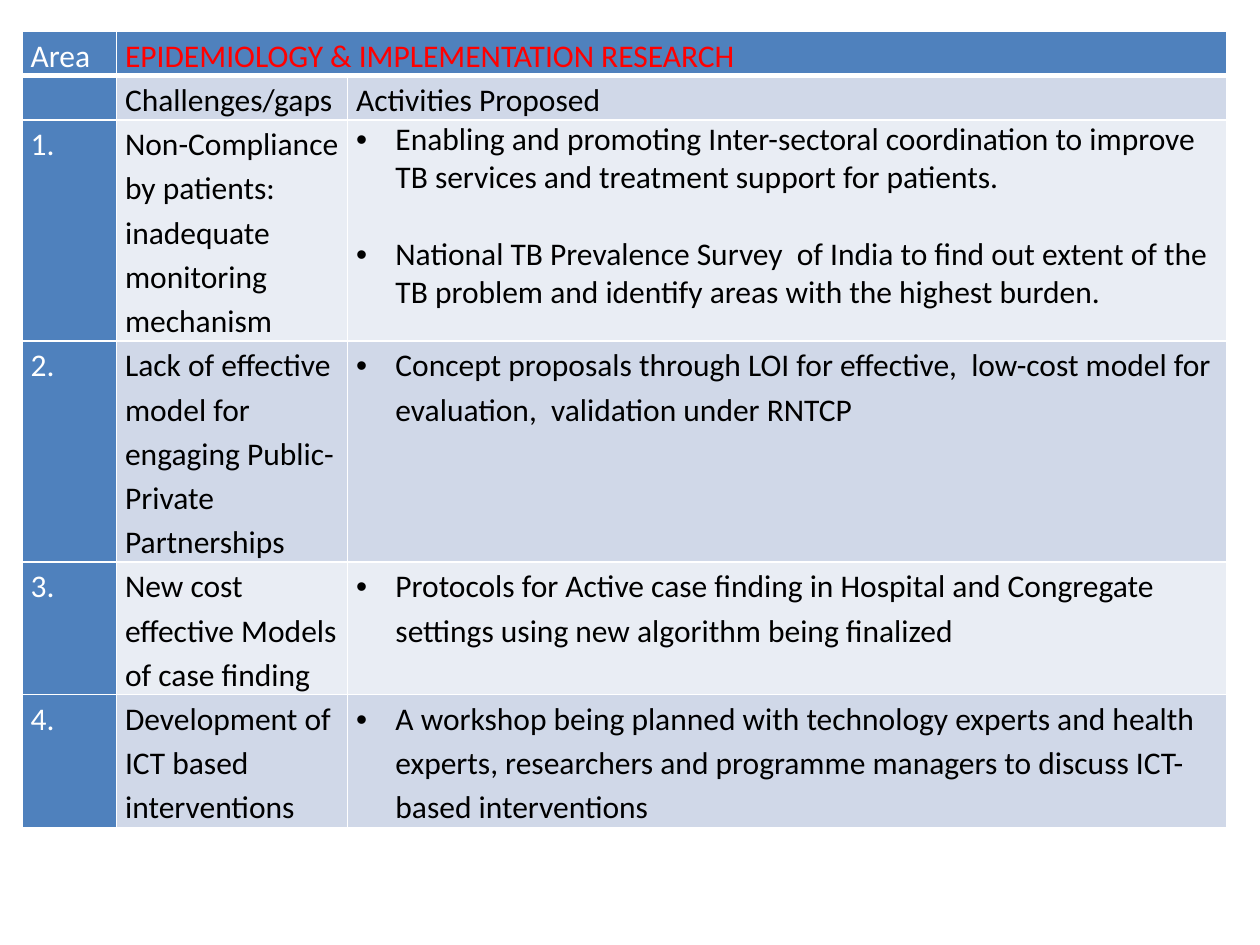
from lxml.etree import SubElement
from pptx import Presentation
from pptx.dml.color import RGBColor
from pptx.oxml.ns import qn
from pptx.util import Pt

WHITE = RGBColor(0xFF, 0xFF, 0xFF)
BLACK = RGBColor(0x00, 0x00, 0x00)
RED = RGBColor(0xFF, 0x00, 0x00)
BLUE = RGBColor(0x4F, 0x81, 0xBD)
BANDS = (RGBColor(0xE9, 0xED, 0xF4), RGBColor(0xD0, 0xD8, 0xE8))

LINE_HEIGHT = 25.2
COLUMN_WIDTHS = (54, 132, 502.5)
# Height of each row, in lines of text
ROW_LINES = (1, 1, 5, 5, 3, 3)

AREAS = (
    ("Non-Compliance by patients:  inadequate monitoring mechanism",
     ("Enabling and promoting Inter-sectoral coordination to improve TB services "
      "and treatment support for patients.",
      "National TB Prevalence Survey  of India to find out extent of the TB problem "
      "and identify areas with the highest burden.")),
    ("Lack of effective model for engaging Public-Private Partnerships",
     ("Concept proposals through LOI for effective,  low-cost model for evaluation,  "
      "validation under RNTCP",)),
    ("New cost effective Models of case finding",
     ("Protocols for Active case finding in Hospital and Congregate settings using "
      "new algorithm being finalized",)),
    ("Development of ICT based interventions",
     ("A workshop being planned with technology experts and health experts, "
      "researchers and programme managers to discuss ICT-based interventions",)),
)


class TableSlide:
    font_name = "Calibri"
    font_size = Pt(18)
    line_spacing = 1.15
    bullet_indent = Pt(22.5)

    def __init__(self, deck):
        self.slide = deck.slides.add_slide(deck.slide_layouts[6])

    def table(self, left, top, widths, heights):
        frame = self.slide.shapes.add_table(
            len(heights), len(widths), Pt(left), Pt(top), Pt(sum(widths)), Pt(sum(heights)))
        table = frame.table
        for column, width in zip(table.columns, widths):
            column.width = Pt(width)
        for row, height in zip(table.rows, heights):
            row.height = Pt(height)
        return table

    def borders(self, cell, bottom=1):
        properties = cell._tc.get_or_add_tcPr()
        for tag, width in (("lnL", 1), ("lnR", 1), ("lnT", 1), ("lnB", bottom)):
            line = SubElement(properties, qn(f"a:{tag}"), w=str(Pt(width)))
            fill = SubElement(line, qn("a:solidFill"))
            SubElement(fill, qn("a:srgbClr"), val=str(WHITE))

    def cell(self, cell, fill, texts, color=BLACK, bullets=False, bottom=1):
        self.borders(cell, bottom)
        cell.fill.solid()
        cell.fill.fore_color.rgb = fill
        cell.margin_left = cell.margin_right = Pt(5)
        cell.margin_top = cell.margin_bottom = 0
        for index, text in enumerate(texts):
            frame = cell.text_frame
            para = frame.add_paragraph() if index else frame.paragraphs[0]
            para.text = text
            # Cells with several items are set solid, with a line's gap between items
            para.line_spacing = self.line_spacing if len(texts) == 1 else 1.0
            if index:
                para.space_before = Pt(22)
            para.font.name = self.font_name
            para.font.size = self.font_size
            para.font.bold = False
            para.font.color.rgb = color
            if bullets:
                self.bullet(para)

    def bullet(self, para):
        properties = para._p.get_or_add_pPr()
        properties.set("marL", str(self.bullet_indent))
        properties.set("indent", str(-self.bullet_indent))
        font = properties.find(qn("a:defRPr"))
        typeface = SubElement(properties, qn("a:buFont"), typeface="Arial")
        mark = SubElement(properties, qn("a:buChar"), char="•")
        font.addprevious(typeface)
        font.addprevious(mark)


def main():
    deck = Presentation()
    deck.slide_width, deck.slide_height = Pt(720), Pt(540)
    page = TableSlide(deck)
    table = page.table(12.5, 18, COLUMN_WIDTHS, [LINE_HEIGHT * lines for lines in ROW_LINES])

    table.cell(0, 1).merge(table.cell(0, 2))
    page.cell(table.cell(0, 0), BLUE, ["Area"], WHITE, bottom=3)
    page.cell(table.cell(0, 1), BLUE, ["EPIDEMIOLOGY & IMPLEMENTATION RESEARCH"], RED, bottom=3)
    page.cell(table.cell(1, 0), BLUE, [""], WHITE)
    page.cell(table.cell(1, 1), BANDS[1], ["Challenges/gaps"])
    page.cell(table.cell(1, 2), BANDS[1], ["Activities Proposed"])

    for number, (challenge, activities) in enumerate(AREAS, start=1):
        row = number + 1
        band = BANDS[row % 2]
        page.cell(table.cell(row, 0), BLUE, [f"{number}."], WHITE)
        page.cell(table.cell(row, 1), band, [challenge])
        page.cell(table.cell(row, 2), band, activities, bullets=True)

    deck.save("out.pptx")


if __name__ == "__main__":
    main()
